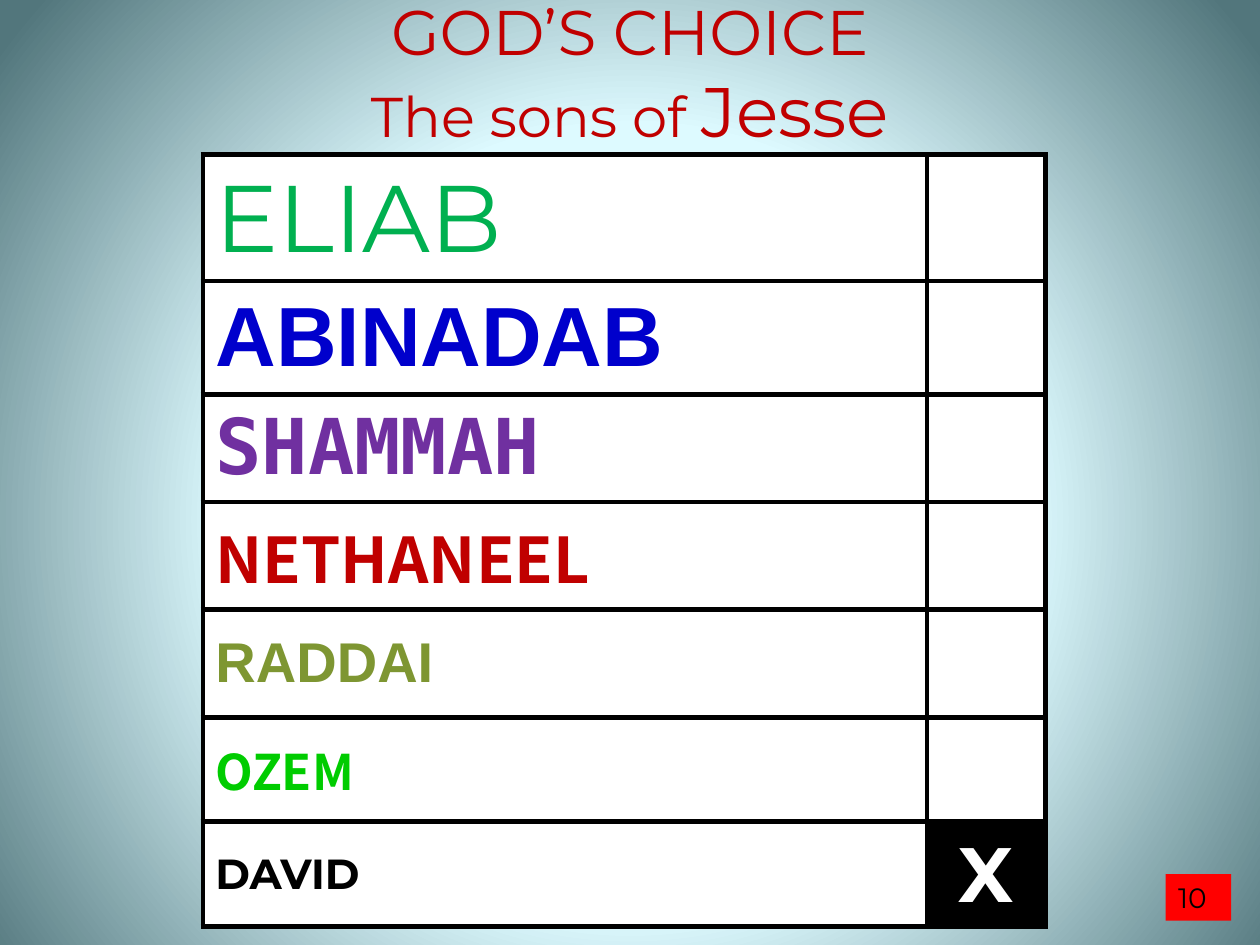
import pptx
import pptx.util
import pptx.dml.color
import pptx.enum.shapes
import pptx.enum.text
import pptx.oxml
import pptx.oxml.ns
from lxml import etree

Cm, Pt = pptx.util.Cm, pptx.util.Pt
RGB = pptx.dml.color.RGBColor
ALIGN = pptx.enum.text.PP_ALIGN
ANCHOR = pptx.enum.text.MSO_ANCHOR
qn = pptx.oxml.ns.qn

BLACK = RGB(0, 0, 0)
WHITE = RGB(255, 255, 255)
RED = RGB(255, 0, 0)
DARK_RED = RGB(0xC0, 0, 0)
GREEN = RGB(0, 0xB0, 0x50)
BLUE = RGB(0, 0, 0xCC)
PURPLE = RGB(0x70, 0x30, 0xA0)
OLIVE = RGB(0x7E, 0x96, 0x32)
LIME = RGB(0, 0xCC, 0)
GLOW = [(0, "DEFBFF"), (50, "DDFAFF"), (100, "52767C")]

# Content: text, size, font, colour, bold
TITLE = [
    [("GOD’S CHOICE", 36, "Montserrat", DARK_RED, False)],
    [("The sons of ", 32, "Montserrat", DARK_RED, False),
     ("Jesse", 40, "Montserrat", DARK_RED, False)],
]
SONS = [
    ("ELIAB", 54, "Montserrat", GREEN, False),
    ("ABINADAB", 48, "Arial", BLUE, True),
    ("SHAMMAH", 44, "DejaVu Sans Mono", PURPLE, True),
    ("NETHANEEL", 36, "Noto Sans CJK KR", DARK_RED, True),
    ("RADDAI", 32, "Arial", OLIVE, True),
    ("OZEM", 28, "Noto Sans CJK SC", LIME, True),
]
DAVID = ("DAVID", 24, "Montserrat", BLACK, True)
MARK = ("X", 44, "Montserrat", WHITE, True)
NUMBER = ("10", 16, "Montserrat", BLACK, False)

# Layout in cm
TABLE_LEFT = 4.09
COLS = [14.6, 2.39]
SON_ROWS = [2.54, 2.28, 2.17, 2.17, 2.17, 2.1]
SON_TOP, DAVID_TOP = 3.12, 16.56


def add_run(p, text, size, font, color, bold):
    r = p.add_run()
    r.text = text
    for name, value in {"size": Pt(size), "name": font, "bold": bold}.items():
        setattr(r.font, name, value)
    r.font.color.rgb = color


def set_borders(cell):
    tc_pr = cell._tc.get_or_add_tcPr()
    for i, side in enumerate(("lnL", "lnR", "lnT", "lnB")):
        ln = etree.Element(qn(f"a:{side}"), w=str(Pt(3)))
        fill = etree.SubElement(ln, qn("a:solidFill"))
        etree.SubElement(fill, qn("a:srgbClr"), val=str(BLACK))
        tc_pr.insert(i, ln)


def add_grid(s, top, heights, rows):
    """Each row is a list of (run or None, fill, alignment)."""
    table = s.shapes.add_table(len(rows), len(COLS), Cm(TABLE_LEFT), Cm(top),
                               Cm(sum(COLS)), Cm(sum(heights))).table
    for column, width in zip(table.columns, COLS):
        column.width = Cm(width)
    for i, (height, row) in enumerate(zip(heights, rows)):
        table.rows[i].height = Cm(height)
        for j, (run, fill, align) in enumerate(row):
            cell = table.cell(i, j)
            cell.fill.solid()
            cell.fill.fore_color.rgb = fill
            cell.vertical_anchor = ANCHOR.MIDDLE
            set_borders(cell)
            if run:
                p = cell.text_frame.paragraphs[0]
                p.alignment = align
                add_run(p, *run)


def set_background(s):
    s.background.fill.gradient()
    grad = s.background._cSld.find(".//" + qn("a:gradFill"))
    for child in list(grad):
        grad.remove(child)
    stops = etree.SubElement(grad, qn("a:gsLst"))
    for pos, color in GLOW:
        gs = etree.SubElement(stops, qn("a:gs"), pos=str(pos * 1000))
        etree.SubElement(gs, qn("a:srgbClr"), val=color)
    circle = etree.SubElement(grad, qn("a:path"), {"path": "circle"})
    etree.SubElement(circle, qn("a:fillToRect"),
                     l="10000", t="110000", r="10000", b="100000")


def main():
    prs = pptx.Presentation()
    prs.slide_width, prs.slide_height = Cm(25.4), Cm(19.05)
    s = prs.slides.add_slide(prs.slide_layouts[6])
    set_background(s)

    # Title
    tf = s.shapes.add_textbox(0, Cm(-0.28), Cm(25.4), Cm(3.5)).text_frame
    tf.word_wrap = True
    for i, runs in enumerate(TITLE):
        p = tf.add_paragraph() if i else tf.paragraphs[0]
        p.alignment = ALIGN.CENTER
        for run in runs:
            add_run(p, *run)

    # Sons passed over, then the chosen one
    add_grid(s, SON_TOP, SON_ROWS,
             [[(son, WHITE, ALIGN.LEFT), (None, WHITE, ALIGN.LEFT)]
              for son in SONS])
    add_grid(s, DAVID_TOP, [1.98],
             [[(DAVID, WHITE, ALIGN.LEFT), (MARK, BLACK, ALIGN.CENTER)]])

    # Slide number
    sp = s.shapes.add_shape(pptx.enum.shapes.MSO_SHAPE.RECTANGLE,
                            Cm(23.5), Cm(17.62), Cm(1.32), Cm(0.94))
    sp.shadow.inherit = False
    sp.fill.solid()
    sp.fill.fore_color.rgb = RED
    sp.line.fill.background()
    p = sp.text_frame.paragraphs[0]
    p.alignment = ALIGN.LEFT
    add_run(p, *NUMBER)

    prs.save("out.pptx")


if __name__ == "__main__":
    main()
